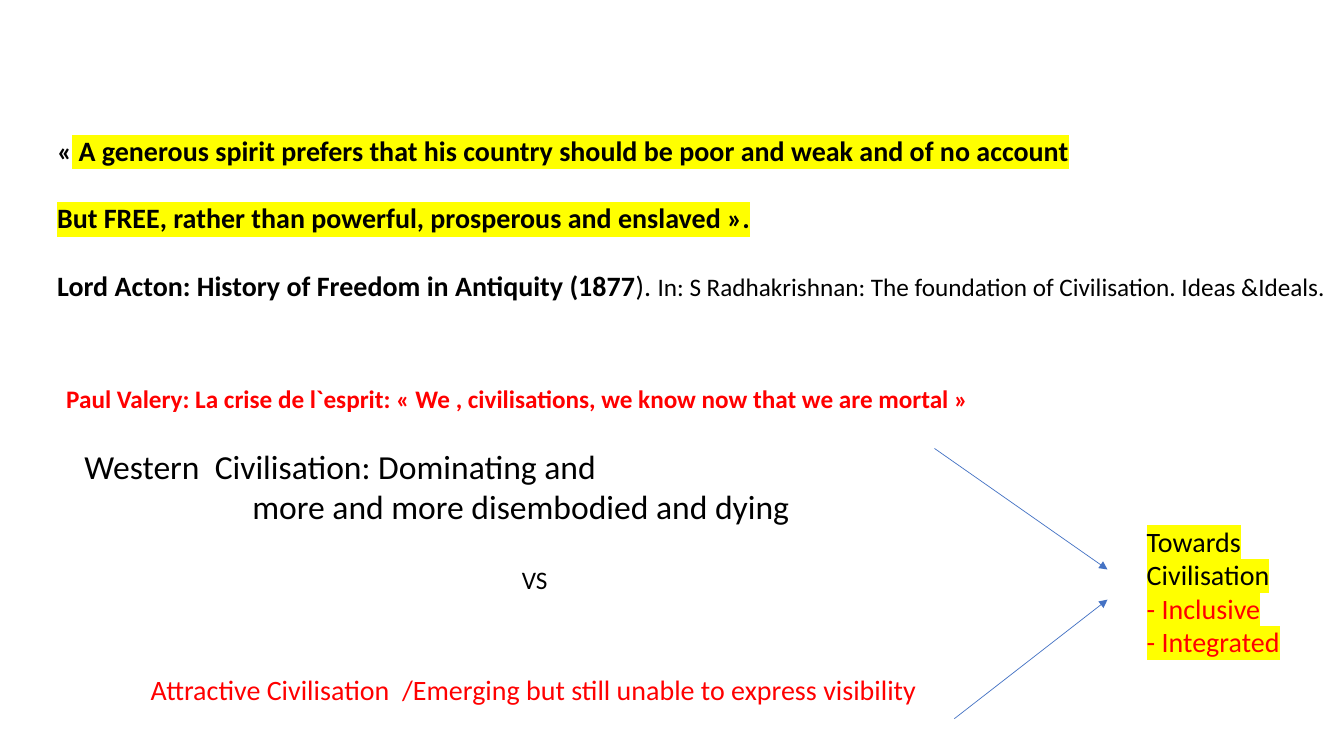
from lxml.etree import SubElement
from pptx import Presentation
from pptx.dml.color import RGBColor
from pptx.enum.shapes import MSO_CONNECTOR
from pptx.enum.text import MSO_AUTO_SIZE
from pptx.oxml.ns import qn
from pptx.util import Cm, Pt

BLACK, RED, YELLOW, BLUE = "000000", "FF0000", "FFFF00", "4472C4"


def color(hex_string):
    return RGBColor.from_string(hex_string)


class SlideBuilder:
    font_name = "Calibri"

    def __init__(self, slide):
        self.slide = slide

    def text_box(self, left, top, width, height):
        """Add an empty box and return its text frame."""
        box = self.slide.shapes.add_textbox(Cm(left), Cm(top), Cm(width), Cm(height))
        frame = box.text_frame
        frame.word_wrap = True
        frame.auto_size = MSO_AUTO_SIZE.SHAPE_TO_FIT_TEXT
        return frame

    def paragraph(self, frame, text="", size=20, ink=BLACK, bold=False,
                  highlight=None, gap=0, indent=0):
        """Fill the empty first paragraph of the frame, or add another."""
        paragraph = frame.paragraphs[0]
        if paragraph.runs:
            paragraph = frame.add_paragraph()
        font = paragraph.font
        font.name, font.size, font.bold = self.font_name, Pt(size), bold
        font.color.rgb = color(ink)
        paragraph.space_after = Pt(gap)
        if indent:
            paragraph._p.get_or_add_pPr().set("marL", str(Cm(indent)))
        if text:
            self.run(paragraph, text, highlight=highlight)
        return paragraph

    def run(self, paragraph, text, size=None, bold=None, highlight=None):
        """Add a run; what is not given comes from the paragraph."""
        run = paragraph.add_run()
        run.text = text
        if size:
            run.font.size = Pt(size)
        run.font.bold = bold
        if highlight:
            mark = SubElement(run._r.get_or_add_rPr(), qn("a:highlight"))
            SubElement(mark, qn("a:srgbClr")).set("val", highlight)

    def arrow(self, start, end):
        ends = [Cm(value) for value in (*start, *end)]
        connector = self.slide.shapes.add_connector(MSO_CONNECTOR.STRAIGHT, *ends)
        connector.line.color.rgb = color(BLUE)
        connector.line.width = Pt(0.5)
        SubElement(connector.line._get_or_add_ln(), qn("a:tailEnd")).set("type", "triangle")
        SubElement(connector._element.spPr, qn("a:effectLst"))


def main():
    presentation = Presentation()
    presentation.slide_width, presentation.slide_height = Cm(33.87), Cm(19.05)
    builder = SlideBuilder(presentation.slides.add_slide(presentation.slide_layouts[6]))

    quote = builder.text_box(1.19, 3.23, 32.94, 4.52)
    line_gap = 24.4
    opening = builder.paragraph(quote, "«", bold=True, gap=line_gap)
    builder.run(opening, " A generous spirit prefers that his country should be poor "
                "and weak and of no account", highlight=YELLOW)
    builder.paragraph(quote, "But FREE, rather than powerful, prosperous and enslaved ».",
                      bold=True, highlight=YELLOW, gap=line_gap)
    reference = builder.paragraph(quote)
    builder.run(reference, "Lord Acton: History of Freedom in Antiquity (1877", bold=True)
    builder.run(reference, "). ")
    builder.run(reference, "In: S Radhakrishnan: The foundation of Civilisation. "
                "Ideas &Ideals.", size=18)

    valery = builder.text_box(1.42, 9.53, 24.1, 1.02)
    builder.paragraph(valery, "Paul Valery: La crise de l`esprit: « We , civilisations, "
                      "we know now that we are mortal »", size=18, ink=RED, bold=True)

    western = builder.text_box(1.88, 11.1, 18.77, 2.31)
    builder.paragraph(western, "Western  Civilisation: Dominating and", size=24)
    builder.paragraph(western, "more and more disembodied and dying", size=24, indent=4.23)

    versus = builder.text_box(12.9, 14.1, 1.5, 1.02)
    builder.paragraph(versus, "VS", size=18)

    attractive = builder.text_box(3.55, 16.81, 20.2, 1.12)
    builder.paragraph(attractive, "Attractive Civilisation  /Emerging but still unable "
                      "to express visibility", ink=RED)

    builder.arrow((23.55, 11.3), (27.91, 14.35))
    builder.arrow((24.05, 18.11), (27.91, 15.11))

    goal = builder.text_box(28.65, 13.08, 4.37, 3.68)
    for text, ink in (("Towards", BLACK), ("Civilisation", BLACK),
                      ("- Inclusive", RED), ("- Integrated", RED)):
        builder.paragraph(goal, text, ink=ink, highlight=YELLOW)

    presentation.save("out.pptx")


if __name__ == "__main__":
    main()
